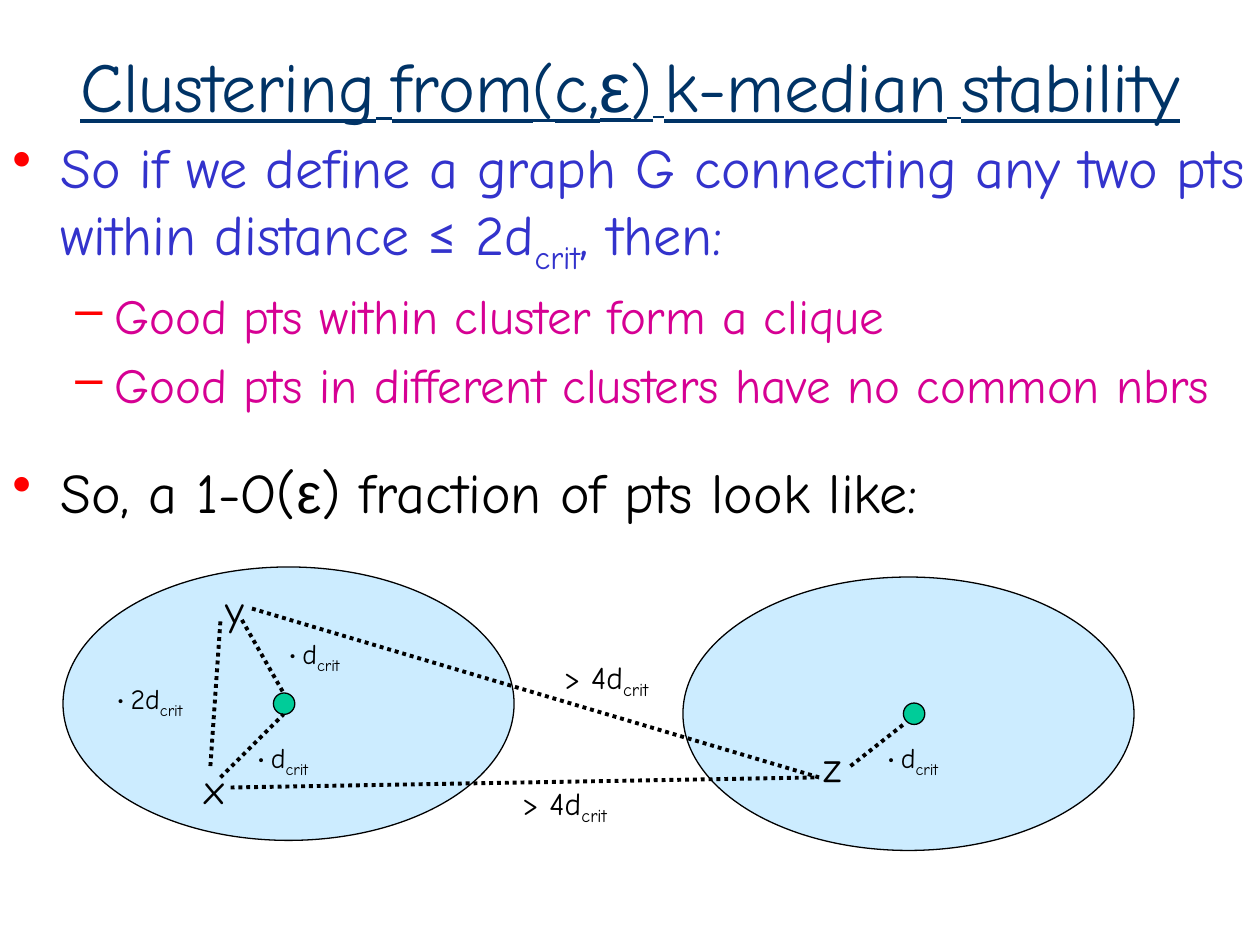
from lxml import etree
from pptx import Presentation
from pptx.dml.color import RGBColor
from pptx.enum.dml import MSO_LINE
from pptx.enum.shapes import MSO_CONNECTOR, MSO_SHAPE
from pptx.enum.text import MSO_ANCHOR, MSO_AUTO_SIZE, PP_ALIGN
from pptx.oxml.ns import qn
from pptx.util import Inches, Pt

COLORS = {"title": "003366", "claim": "3333CC", "detail": "D60093", "bullet": "FF0000",
          "black": "000000", "cluster": "CCECFF", "center": "00CC99"}
FONT = "Comic Neue"

# A piece of text is (text, options); options are size, font and sub (subscript).
CRIT = ("crit", {"sub": True})
EPSILON = ("ε", {"font": "Arial"})
TITLE = [("Clustering", {}), (" ", {"size": 28}), ("from", {}), ("(", {"size": 36}),
         ("c,", {}), EPSILON, (")", {"size": 36}), (" ", {"size": 20}),
         ("k-median", {}), (" ", {"size": 24}), ("stability", {})]

# Bullet paragraphs: level, size, color, pieces
CLAIMS = [
    (0, 32, "claim", [
        ("So if we define a graph G connecting any two pts within distance ", {}),
        ("≤", {"font": "Calibri"}), (" 2d", {}), CRIT, (", then:", {})]),
    (1, 28, "detail", [("Good pts within cluster form a clique", {})]),
    (1, 28, "detail", [("Good pts in different clusters have no common nbrs", {})]),
]
CONCLUSION = [(0, 32, "black", [("So, a 1-O(", {}), EPSILON,
                                (") fraction of pts look like:", {})])]
BULLETS = [("•", 0.38, 0.38), ("–", 0.81, 0.31)]  # sign, margin, hanging indent

CLUSTERS = [(0.5, 4.5), (5.42, 4.58)]
CENTERS = [(2.17, 5.5), (7.17, 5.58)]
DOT = ("· ", {"font": "Calibri"})
NEAR = [DOT, ("d", {}), CRIT]
TWICE = [DOT, ("2d", {}), CRIT]
FAR = [("> 4d", {}), CRIT]
# Labels: left, top, width, height, size, pieces
LABELS = [
    (1.5, 6, 0.4, 0.5, 24, [("x", {})]),
    (1.67, 4.58, 0.38, 0.5, 24, [("y", {})]),
    (6.42, 5.83, 0.38, 0.5, 24, [("z", {})]),
    (2.08, 5, 0.83, 0.37, 16, NEAR),
    (1.83, 5.83, 0.83, 0.37, 16, NEAR),
    (6.83, 5.83, 0.83, 0.37, 16, NEAR),
    (4.33, 5.17, 0.96, 0.4, 18, FAR),
    (4, 6.17, 0.96, 0.4, 18, FAR),
    (0.71, 5.36, 0.96, 0.37, 16, TWICE),
]
# Distances: x and y of the start, x and y of the end
DISTANCES = [
    (1.75, 6.17, 2.25, 5.67), (1.92, 4.92, 2.25, 5.5), (6.75, 6.08, 7.17, 5.75),
    (1.83, 6.25, 6.5, 6.17), (2, 4.83, 6.5, 6.17), (1.67, 6.08, 1.75, 4.92),
]


def rgb(name):
    return RGBColor.from_string(COLORS[name])


def add_pieces(para, pieces, size, color, underline=None):
    for text, options in pieces:
        span = para.add_run()
        span.text = text
        span.font.name = options.get("font", FONT)
        span.font.size = Pt(options.get("size", size))
        span.font.color.rgb = rgb(color)
        span.font.underline = underline
        if options.get("sub"):
            span._r.get_or_add_rPr().set("baseline", "-25000")


def add_bullet(para, level):
    sign, margin, hanging = BULLETS[level]
    props = para._p.get_or_add_pPr()
    props.set("marL", str(Inches(margin)))
    props.set("indent", str(-Inches(hanging)))
    color = etree.SubElement(props, qn("a:buClr"))
    etree.SubElement(color, qn("a:srgbClr")).set("val", COLORS["bullet"])
    etree.SubElement(props, qn("a:buChar")).set("char", sign)


def add_text_box(slide, *place):
    return slide.shapes.add_textbox(*map(Inches, place)).text_frame


def add_bullet_list(slide, place, items):
    frame = add_text_box(slide, *place)
    frame.word_wrap = True
    for number, (level, size, color, pieces) in enumerate(items):
        para = frame.add_paragraph() if number else frame.paragraphs[0]
        para.level = level
        para.space_before = Pt(0.2 * size)
        add_bullet(para, level)
        add_pieces(para, pieces, size, color)


def add_label(slide, left, top, width, height, size, pieces):
    frame = add_text_box(slide, left, top, width, height)
    frame.word_wrap = False
    frame.auto_size = MSO_AUTO_SIZE.SHAPE_TO_FIT_TEXT
    frame.paragraphs[0].alignment = PP_ALIGN.CENTER
    add_pieces(frame.paragraphs[0], pieces, size, "black")


def add_ellipse(slide, left, top, width, height, color):
    ellipse = slide.shapes.add_shape(MSO_SHAPE.OVAL, *map(Inches, (left, top, width, height)))
    ellipse.shadow.inherit = False
    ellipse.fill.solid()
    ellipse.fill.fore_color.rgb = rgb(color)
    ellipse.line.color.rgb = rgb("black")
    ellipse.line.width = Pt(0.75)


def add_dotted_line(slide, *ends):
    line = slide.shapes.add_connector(MSO_CONNECTOR.STRAIGHT, *map(Inches, ends))
    line.line.color.rgb = rgb("black")
    line.line.width = Pt(2.25)
    line.line.dash_style = MSO_LINE.ROUND_DOT
    etree.SubElement(line._element.spPr, qn("a:effectLst"))


def main():
    deck = Presentation()
    deck.slide_width, deck.slide_height = Inches(10), Inches(7.5)
    slide = deck.slides.add_slide(deck.slide_layouts[5])

    title = slide.shapes.title
    title.left, title.top, title.width, title.height = map(Inches, (0, 0.17, 10, 1))
    title.text_frame.auto_size = MSO_AUTO_SIZE.NONE
    title.text_frame.vertical_anchor = MSO_ANCHOR.MIDDLE
    heading = title.text_frame.paragraphs[0]
    heading.alignment = PP_ALIGN.CENTER
    add_pieces(heading, TITLE, 40, "title", underline=True)

    add_bullet_list(slide, (0, 1, 10, 6.33), CLAIMS)
    for left, top in CLUSTERS:
        add_ellipse(slide, left, top, 3.58, 2.17, "cluster")
    for left, top in CENTERS:
        add_ellipse(slide, left, top, 0.17, 0.17, "center")
    for distance in DISTANCES:
        add_dotted_line(slide, *distance)
    for label in LABELS:
        add_label(slide, *label)
    add_bullet_list(slide, (0, 3.58, 10, 0.67), CONCLUSION)

    deck.save("out.pptx")


if __name__ == "__main__":
    main()
